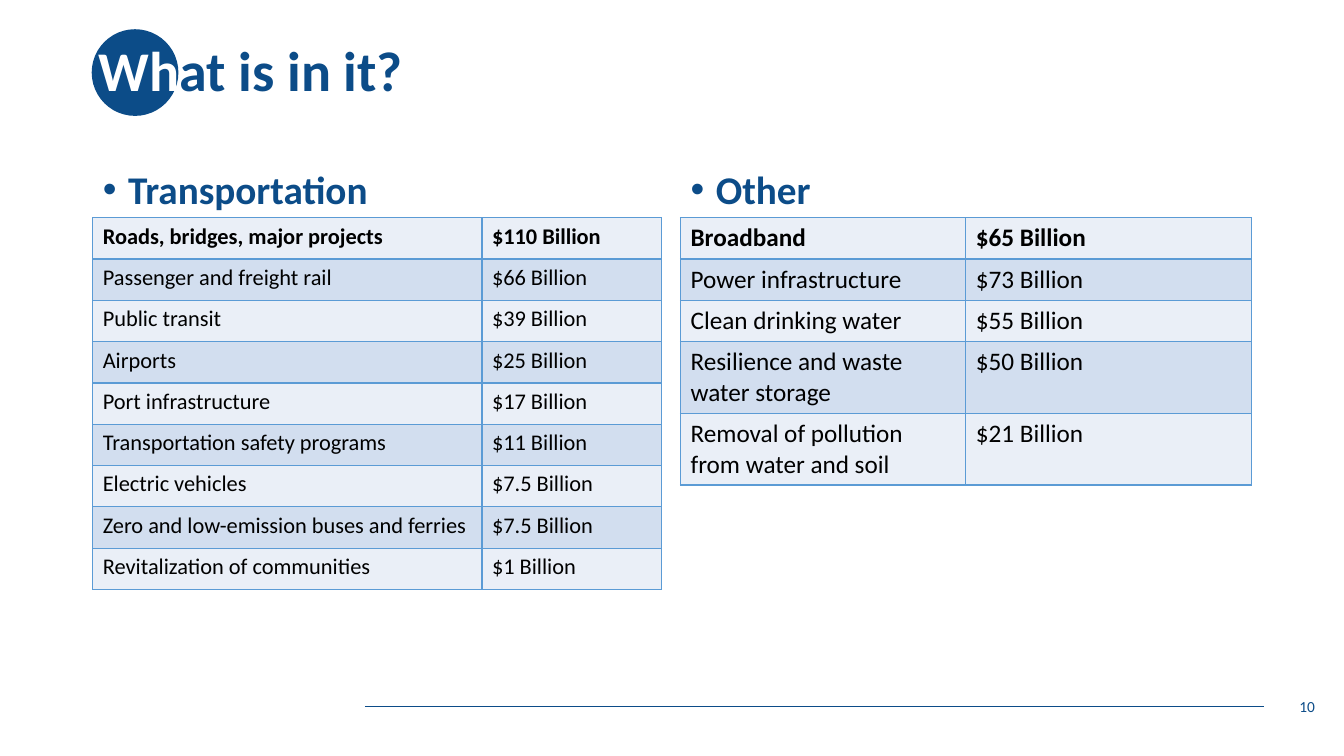
from lxml.etree import SubElement
from pptx import Presentation
from pptx.dml.color import RGBColor
from pptx.enum.shapes import MSO_CONNECTOR as Connector, MSO_SHAPE as Shape
from pptx.enum.text import MSO_ANCHOR as Anchor, MSO_AUTO_SIZE as AutoSize, PP_ALIGN as Align
from pptx.oxml import parse_xml
from pptx.oxml.ns import nsdecls, qn
from pptx.util import Inches, Pt

COLORS = {
    "navy": "0C4C88",
    "white": "FFFFFF",
    "black": "000000",
    "border": "5B9BD5",
    "light": "EAEFF7",
    "band": "D2DEEF",
}
ROW_HEIGHT, TALL_ROW = 0.41, 0.71

TRANSPORTATION = [
    ("Roads, bridges, major projects", "$110 Billion"),
    ("Passenger and freight rail", "$66 Billion"),
    ("Public transit", "$39 Billion"),
    ("Airports", "$25 Billion"),
    ("Port infrastructure", "$17 Billion"),
    ("Transportation safety programs", "$11 Billion"),
    ("Electric vehicles", "$7.5 Billion"),
    ("Zero and low-emission buses and ferries", "$7.5 Billion"),
    ("Revitalization of communities", "$1 Billion"),
]
OTHER = [
    ("Broadband", "$65 Billion"),
    ("Power infrastructure", "$73 Billion"),
    ("Clean drinking water", "$55 Billion"),
    ("Resilience and waste water storage", "$50 Billion"),
    ("Removal of pollution from water and soil", "$21 Billion"),
]


def color(name):
    return RGBColor.from_string(COLORS[name])


def set_all(target, values):
    for attribute, value in values.items():
        setattr(target, attribute, value)


def place(shape, left, top, width, height):
    set_all(shape, {"left": Inches(left), "top": Inches(top),
                    "width": Inches(width), "height": Inches(height)})


def add_run(paragraph, text, size, color_name, bold=False):
    run = paragraph.add_run()
    run.text = text
    set_all(run.font, {"name": "Calibri", "size": Pt(size), "bold": bold})
    run.font.color.rgb = color(color_name)


def add_decoration(slide):
    circle = slide.shapes.add_shape(
        Shape.OVAL, Inches(0.91), Inches(0.29), Inches(0.86), Inches(0.86))
    circle.shadow.inherit = False
    circle.fill.solid()
    circle.fill.fore_color.rgb = color("navy")
    circle.line.fill.background()

    rule = slide.shapes.add_connector(
        Connector.STRAIGHT, Inches(3.62), Inches(7.01), Inches(12.54), Inches(7.01))
    rule.line.color.rgb = color("navy")
    rule.line.width = Pt(0.5)
    SubElement(rule._element.spPr, qn("a:effectLst"))

    # Both lie behind the title
    for part in (circle, rule):
        slide.shapes._spTree.insert(2, part._element)


def fill_title(title):
    place(title, 0.88, 0, 11.5, 1.45)
    set_all(title.text_frame, {"vertical_anchor": Anchor.MIDDLE, "auto_size": AutoSize.NONE})
    paragraph = title.text_frame.paragraphs[0]
    set_all(paragraph, {"line_spacing": 0.9, "alignment": Align.LEFT})
    add_run(paragraph, "Wh", 40, "white", bold=True)
    add_run(paragraph, "at is in it?", 40, "navy", bold=True)


def fill_heading(heading, text, left, width):
    place(heading, left, 1.26, width, 0.9)
    set_all(heading.text_frame, {"vertical_anchor": Anchor.BOTTOM, "auto_size": AutoSize.NONE})
    paragraph = heading.text_frame.paragraphs[0]
    properties = paragraph._p.get_or_add_pPr()
    set_all(paragraph, {"line_spacing": 0.9, "space_before": Pt(0)})
    properties.set("marL", str(Inches(0.25)))
    properties.set("indent", str(-Inches(0.25)))
    SubElement(properties, qn("a:buFont"), typeface="Arial")
    SubElement(properties, qn("a:buChar"), char="•")
    add_run(paragraph, text, 28, "navy", bold=True)


def add_borders(cell):
    properties = cell._tc.get_or_add_tcPr()
    for index, side in enumerate(("lnL", "lnR", "lnT", "lnB")):
        properties.insert(index, parse_xml(
            f'<a:{side} {nsdecls("a")} w="{Pt(1)}"><a:solidFill>'
            f'<a:srgbClr val="{COLORS["border"]}"/></a:solidFill></a:{side}>'))


def add_funding_table(slide, items, left, columns, size, tall_rows=()):
    heights = [TALL_ROW if row in tall_rows else ROW_HEIGHT for row in range(len(items))]
    table = slide.shapes.add_table(
        len(items), len(columns), Inches(left), Inches(2.16),
        Inches(sum(columns)), Inches(sum(heights))).table
    set_all(table, {"first_row": False, "horz_banding": False})
    for column, width in zip(table.columns, columns):
        column.width = Inches(width)
    for row_index, (item, height) in enumerate(zip(items, heights)):
        table.rows[row_index].height = Inches(height)
        for column_index, text in enumerate(item):
            cell = table.cell(row_index, column_index)
            cell.fill.solid()
            cell.fill.fore_color.rgb = color("band" if row_index % 2 else "light")
            add_borders(cell)
            add_run(cell.text_frame.paragraphs[0], text, size, "black", bold=row_index == 0)


def add_page_number(slide):
    frame = slide.shapes.add_textbox(
        Inches(10.14), Inches(6.81), Inches(3), Inches(0.4)).text_frame
    set_all(frame, {"word_wrap": True, "vertical_anchor": Anchor.MIDDLE})
    frame.paragraphs[0].alignment = Align.RIGHT
    add_run(frame.paragraphs[0], "10", 11, "navy")


def main():
    deck = Presentation()
    set_all(deck, {"slide_width": Inches(13.33), "slide_height": Inches(7.5)})
    slide = deck.slides.add_slide(deck.slide_layouts.get_by_name("Comparison"))
    title, left_heading, left_body, right_heading, right_body = slide.placeholders

    # The tables take the place of the content placeholders
    for body in (left_body, right_body):
        body._element.getparent().remove(body._element)

    add_decoration(slide)
    fill_title(title)

    # Transportation column
    fill_heading(left_heading, "Transportation", 0.92, 5.64)
    add_funding_table(slide, TRANSPORTATION, 0.92, (3.86, 1.78), 16)

    # Other column
    fill_heading(right_heading, "Other", 6.75, 5.67)
    add_funding_table(slide, OTHER, 6.75, (2.83, 2.83), 18, tall_rows=(3, 4))

    add_page_number(slide)
    deck.save("out.pptx")


if __name__ == "__main__":
    main()
